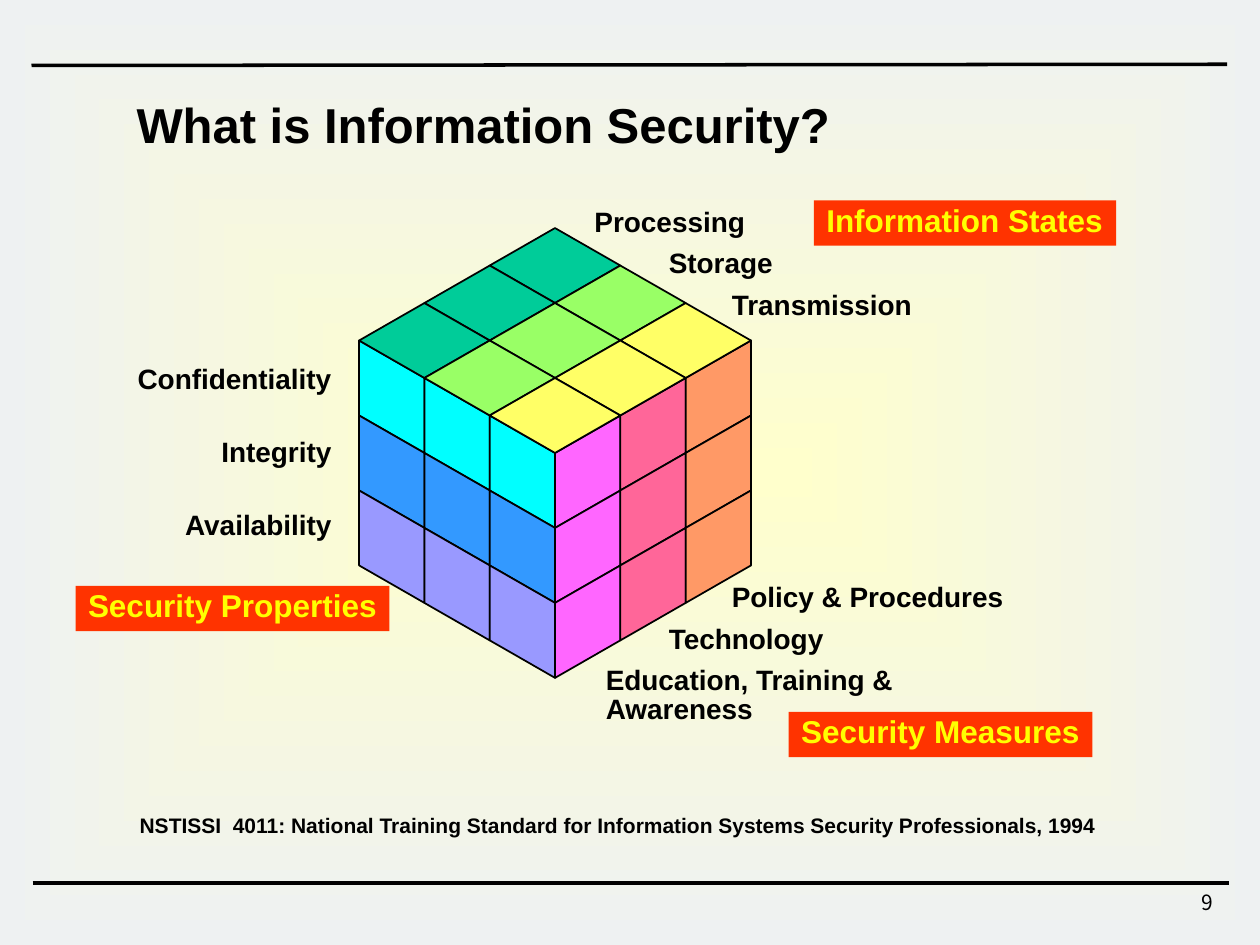
import dataclasses

import lxml.etree
import pptx
import pptx.dml.color
import pptx.enum.shapes
import pptx.enum.text
import pptx.oxml
import pptx.oxml.ns
import pptx.util

Inches = pptx.util.Inches
Align = pptx.enum.text.PP_ALIGN


@dataclasses.dataclass(frozen=True)
class Theme:
    font: str = "Arial"
    number_font: str = "Noto Sans CJK KR"
    ink: str = "000000"
    center: str = "FFFFCC"
    edge: str = "EEF1F2"
    tag_fill: str = "FF3300"
    tag_ink: str = "FFFF00"
    states: tuple = ("00CC99", "99FF66", "FFFF66")
    properties: tuple = ("00FFFF", "3399FF", "9999FF")
    measures: tuple = ("FF66FF", "FF6699", "FF9966")
    title_size: int = 28
    tag_size: int = 18
    label_size: int = 16
    small_size: int = 12
    rule_width: int = 2
    cube_line: int = 1


THEME = Theme()


def rgb(value):
    return pptx.dml.color.RGBColor.from_string(value)


def write(shape, text, size, color=THEME.ink, font=THEME.font, bold=True,
          align=Align.LEFT, spacing=None, wrap=False):
    frame = shape.text_frame
    frame.text = text
    frame.word_wrap = wrap
    frame.auto_size = pptx.enum.text.MSO_AUTO_SIZE.NONE
    frame.vertical_anchor = pptx.enum.text.MSO_ANCHOR.TOP
    para = frame.paragraphs[0]
    para.alignment = align
    if spacing:
        para.line_spacing = spacing
    span = para.runs[0]
    span.font.name = font
    span.font.size = pptx.util.Pt(size)
    span.font.bold = bold
    span.font.color.rgb = rgb(color)


def add_text(page, box, text, size, **style):
    shape = page.shapes.add_textbox(*map(Inches, box))
    write(shape, text, size, **style)
    return shape


def paint_background(page):
    fill = page.background.fill
    fill.gradient()
    for stop, color in zip(fill.gradient_stops, (THEME.center, THEME.edge)):
        stop.color.rgb = rgb(color)
    qn = pptx.oxml.ns.qn
    linear = next(page.background._cSld.iter(qn("a:lin")))
    radial = lxml.etree.Element(qn("a:path"), {"path": "rect"})
    lxml.etree.SubElement(radial, qn("a:fillToRect"),
                          dict.fromkeys("ltrb", "50000"))
    linear.getparent().replace(linear, radial)


def add_rule(page, start, end):
    rule = page.shapes.add_connector(
        pptx.enum.shapes.MSO_CONNECTOR.STRAIGHT,
        *map(Inches, start + end))
    rule.line.color.rgb = rgb(THEME.ink)
    rule.line.width = pptx.util.Pt(THEME.rule_width)
    lxml.etree.SubElement(rule._element.spPr, pptx.oxml.ns.qn("a:effectLst"))


def place_title(page, box):
    title = page.shapes.title
    title.left, title.top, title.width, title.height = map(Inches, box)
    write(title, "What is Information Security?", THEME.title_size,
          align=Align.CENTER, wrap=True)
    frame = title.text_frame
    frame.margin_left = frame.margin_right = frame.margin_bottom = 0
    frame.margin_top = Inches(0.03)


def style_face(face, color):
    face.shadow.inherit = False
    face.fill.solid()
    face.fill.fore_color.rgb = rgb(color)
    face.line.color.rgb = rgb(THEME.ink)
    face.line.width = pptx.util.Pt(THEME.cube_line)


def add_side_face(page, left, top, step_x, step_y, slope, color):
    right = left + step_x
    shift = slope * step_y
    builder = page.shapes.build_freeform(Inches(left), Inches(top))
    corners = [(right, top + shift), (right, top + shift + 2 * step_y),
               (left, top + 2 * step_y)]
    builder.add_line_segments([(Inches(x), Inches(y)) for x, y in corners],
                              close=True)
    style_face(builder.convert_to_shape(), color)


def draw_cube(page, box):
    left, top, width, height = box
    step_x, step_y = width / 6, height / 12
    middle = left + width / 2
    for column in range(3):
        for row in range(3):
            add_side_face(page, left + column * step_x,
                          top + (3 + column + 2 * row) * step_y,
                          step_x, step_y, 1, THEME.properties[row])
            add_side_face(page, middle + column * step_x,
                          top + (6 - column + 2 * row) * step_y,
                          step_x, step_y, -1, THEME.measures[column])
    for state, color in enumerate(THEME.states):
        for depth in range(3):
            diamond = page.shapes.add_shape(
                pptx.enum.shapes.MSO_SHAPE.DIAMOND,
                Inches(middle + (state - depth - 1) * step_x),
                Inches(top + (state + depth) * step_y),
                Inches(2 * step_x), Inches(2 * step_y))
            style_face(diamond, color)


def add_labels(page, top, pitch, labels, align=Align.LEFT):
    for index, (text, left, width) in enumerate(labels):
        add_text(page, (left, top + index * pitch, width, 0.33), text,
                 THEME.label_size, align=align, spacing=0.86)


def add_tag(page, box, text):
    tag = add_text(page, box, text, THEME.tag_size, color=THEME.tag_ink,
                   spacing=0.85)
    tag.fill.solid()
    tag.fill.fore_color.rgb = rgb(THEME.tag_fill)


def main():
    deck = pptx.Presentation()
    deck.slide_width, deck.slide_height = Inches(10), Inches(7.5)
    page = deck.slides.add_slide(deck.slide_layouts[5])

    paint_background(page)
    add_rule(page, (0.25, 0.52), (9.74, 0.51))
    add_rule(page, (0.26, 7.01), (9.75, 7.01))
    add_text(page, (7.65, 7.01, 2.08, 0.33), "9", THEME.small_size,
             font=THEME.number_font, bold=False, align=Align.RIGHT)
    place_title(page, (0.63, 0.72, 6.41, 0.62))
    draw_cube(page, (2.85, 1.81, 3.11, 3.57))

    add_labels(page, 2.86, 0.58, [("Confidentiality", 0.98, 1.75),
                                  ("Integrity", 1.65, 1.08),
                                  ("Availability", 1.35, 1.38)], Align.RIGHT)
    add_labels(page, 1.61, 0.33, [("Processing", 4.62, 1.4),
                                  ("Storage", 5.21, 1.03),
                                  ("Transmission", 5.71, 1.65)])
    add_labels(page, 4.59, 0.33, [("Policy & Procedures", 5.71, 2.36),
                                  ("Technology", 5.21, 1.45)])
    add_text(page, (4.71, 5.25, 2.83, 0.56), "Education, Training & Awareness",
             THEME.label_size, spacing=0.86, wrap=True)

    add_tag(page, (0.6, 4.65, 2.49, 0.36), "Security Properties")
    add_tag(page, (6.46, 1.59, 2.4, 0.36), "Information States")
    add_tag(page, (6.26, 5.65, 2.41, 0.36), "Security Measures")
    add_text(page, (1.01, 6.4, 7.82, 0.3),
             "NSTISSI  4011: National Training Standard for Information "
             "Systems Security Professionals, 1994", THEME.small_size)
    deck.save("out.pptx")


if __name__ == "__main__":
    main()
